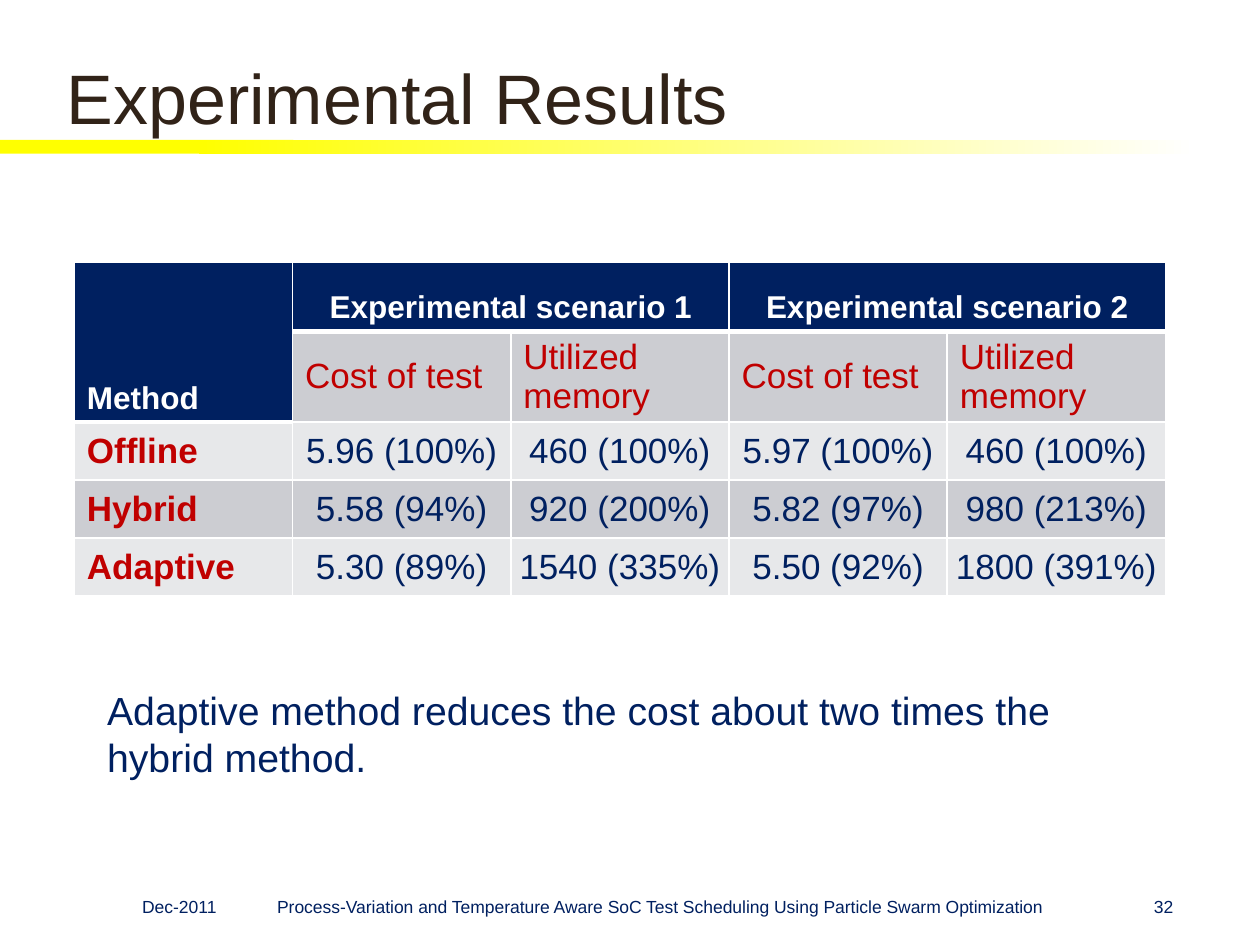
"""Build the experimental results slide with its comparison table."""
from dataclasses import dataclass

from lxml.etree import SubElement
from pptx import Presentation
from pptx.dml.color import RGBColor
from pptx.enum.shapes import MSO_SHAPE
from pptx.enum.text import MSO_ANCHOR as ANCHOR, MSO_AUTO_SIZE as AUTO, PP_ALIGN as ALIGN
from pptx.oxml.ns import qn
from pptx.util import Inches, Pt

NAVY, RED, WHITE, YELLOW = "002060", "C00000", "FFFFFF", "FFFF00"
DARK, LIGHT = "CCCDD2", "E7E8EA"


@dataclass
class Style:
    size: float
    color: str = NAVY
    bold: bool = False
    align: ALIGN = ALIGN.LEFT
    anchor: ANCHOR = ANCHOR.MIDDLE


@dataclass
class Footer:
    text: str
    left: float
    width: float
    align: ALIGN


HEAD = Style(18, WHITE, True, ALIGN.LEFT, ANCHOR.BOTTOM)
SCENARIO = Style(18, WHITE, True, ALIGN.CENTER, ANCHOR.BOTTOM)
MEASURE = Style(20, RED)
METHOD = Style(20, RED, True)
VALUE = Style(20, NAVY, False, ALIGN.CENTER)

RESULTS = [
    ("Offline", "5.96 (100%)", "460 (100%)", "5.97 (100%)", "460 (100%)"),
    ("Hybrid", "5.58 (94%)", "920 (200%)", "5.82 (97%)", "980 (213%)"),
    ("Adaptive", "5.30 (89%)", "1540 (335%)", "5.50 (92%)", "1800 (391%)"),
]
FOOTERS = [
    Footer("Dec-2011", 1.03, 0.82, ALIGN.LEFT),
    Footer("Process-Variation and Temperature Aware SoC Test Scheduling "
           "Using Particle Swarm Optimization", 1.93, 6.61, ALIGN.CENTER),
    Footer("32", 8.62, 0.79, ALIGN.RIGHT),
]


def rgb(color: str) -> RGBColor:
    return RGBColor.from_string(color)


def write(tf, text: str, style: Style):
    tf.text = text
    p = tf.paragraphs[0]
    p.alignment = style.align
    p.font.name, p.font.size, p.font.bold = "Arial", Pt(style.size), style.bold
    p.font.color.rgb = rgb(style.color)
    return p


def place(sp, left: float, top: float, width: float, height: float) -> None:
    sp.left, sp.top = Inches(left), Inches(top)
    sp.width, sp.height = Inches(width), Inches(height)


def fill_frame(sp, text: str, style: Style):
    tf = sp.text_frame
    tf.word_wrap, tf.auto_size = True, AUTO.NONE
    tf.vertical_anchor = style.anchor
    return write(tf, text, style)


def add_bar(s, left: float, width: float, fade: bool, order: int) -> None:
    sp = s.shapes.add_shape(MSO_SHAPE.RECTANGLE, Inches(left), Inches(1.11),
                            Inches(width), Inches(0.11))
    sp.shadow.inherit = False
    sp.line.fill.background()
    if fade:
        sp.fill.gradient()
        sp.fill.gradient_angle = 0
        for stop, color, position in zip(sp.fill.gradient_stops, (YELLOW, WHITE), (0, 1)):
            stop.color.rgb, stop.position = rgb(color), position
    else:
        sp.fill.solid()
        sp.fill.fore_color.rgb = rgb(YELLOW)
    s.shapes._spTree.insert(2 + order, sp._element)


def set_borders(cell, bottom: float) -> None:
    tc_pr = cell._tc.get_or_add_tcPr()
    for i, (side, width) in enumerate((("L", 1), ("R", 1), ("T", 1), ("B", bottom))):
        ln = tc_pr.makeelement(qn(f"a:ln{side}"), {"w": str(Pt(width))})
        SubElement(SubElement(ln, qn("a:solidFill")), qn("a:srgbClr"), val=WHITE)
        tc_pr.insert(i, ln)


def set_cell(cell, text: str, style: Style, fill: str) -> None:
    write(cell.text_frame, text, style)
    cell.vertical_anchor = style.anchor
    if style is VALUE:
        cell.margin_left = cell.margin_right = Inches(0.06)
        cell.margin_top = cell.margin_bottom = 0
    cell.fill.solid()
    cell.fill.fore_color.rgb = rgb(fill)


def add_results(s) -> None:
    heights = (0.55, 0.71, 0.46, 0.46, 0.46)
    table = s.shapes.add_table(5, 5, Inches(0.59), Inches(2.08),
                               Inches(8.66), Inches(sum(heights))).table
    table.horz_banding = False
    for col in table.columns:
        col.width = Inches(8.66 / 5)
    for row, height in zip(table.rows, heights):
        row.height = Inches(height)

    table.cell(0, 0).merge(table.cell(1, 0))
    set_cell(table.cell(0, 0), "Method", HEAD, NAVY)
    for n, c in enumerate((1, 3), 1):
        table.cell(0, c).merge(table.cell(0, c + 1))
        set_cell(table.cell(0, c), f"Experimental scenario {n}", SCENARIO, NAVY)
        set_cell(table.cell(1, c), "Cost of test", MEASURE, DARK)
        set_cell(table.cell(1, c + 1), "Utilized memory", MEASURE, DARK)
    for r, result in enumerate(RESULTS, 2):
        for c, text in enumerate(result):
            set_cell(table.cell(r, c), text, VALUE if c else METHOD, DARK if r % 2 else LIGHT)
    for r in range(5):
        for c in range(5):
            set_borders(table.cell(r, c), 3 if r == 0 or (r, c) == (1, 0) else 1)


def main() -> None:
    prs = Presentation()
    prs.slide_width, prs.slide_height = Inches(10), Inches(7.5)
    s = prs.slides.add_slide(prs.slide_layouts[1])
    add_bar(s, 0, 2.33, False, 0)
    add_bar(s, 1.58, 7.92, True, 1)

    title, body = s.shapes.title, s.placeholders[1]
    place(title, 0.43, 0.36, 8.82, 0.79)
    fill_frame(title, "Experimental Results", Style(40, "312318", anchor=ANCHOR.BOTTOM))
    place(body, 0.75, 5.4, 8.38, 0.71)
    p = fill_frame(body, "Adaptive method reduces the cost about two times the hybrid method.",
                   Style(22.4, anchor=ANCHOR.TOP))
    p.space_before = Pt(4.5)
    p_pr = p._p.get_or_add_pPr()
    p_pr.set("marL", "0")
    p_pr.set("indent", "0")
    p_pr.insert_element_before(p_pr.makeelement(qn("a:buNone"), {}), "a:tabLst", "a:defRPr")

    add_results(s)
    for f in FOOTERS:
        sp = s.shapes.add_textbox(Inches(f.left), Inches(6.98), Inches(f.width), Inches(0.35))
        fill_frame(sp, f.text, Style(10, align=f.align, anchor=ANCHOR.BOTTOM))
    prs.save("out.pptx")


if __name__ == "__main__":
    main()
